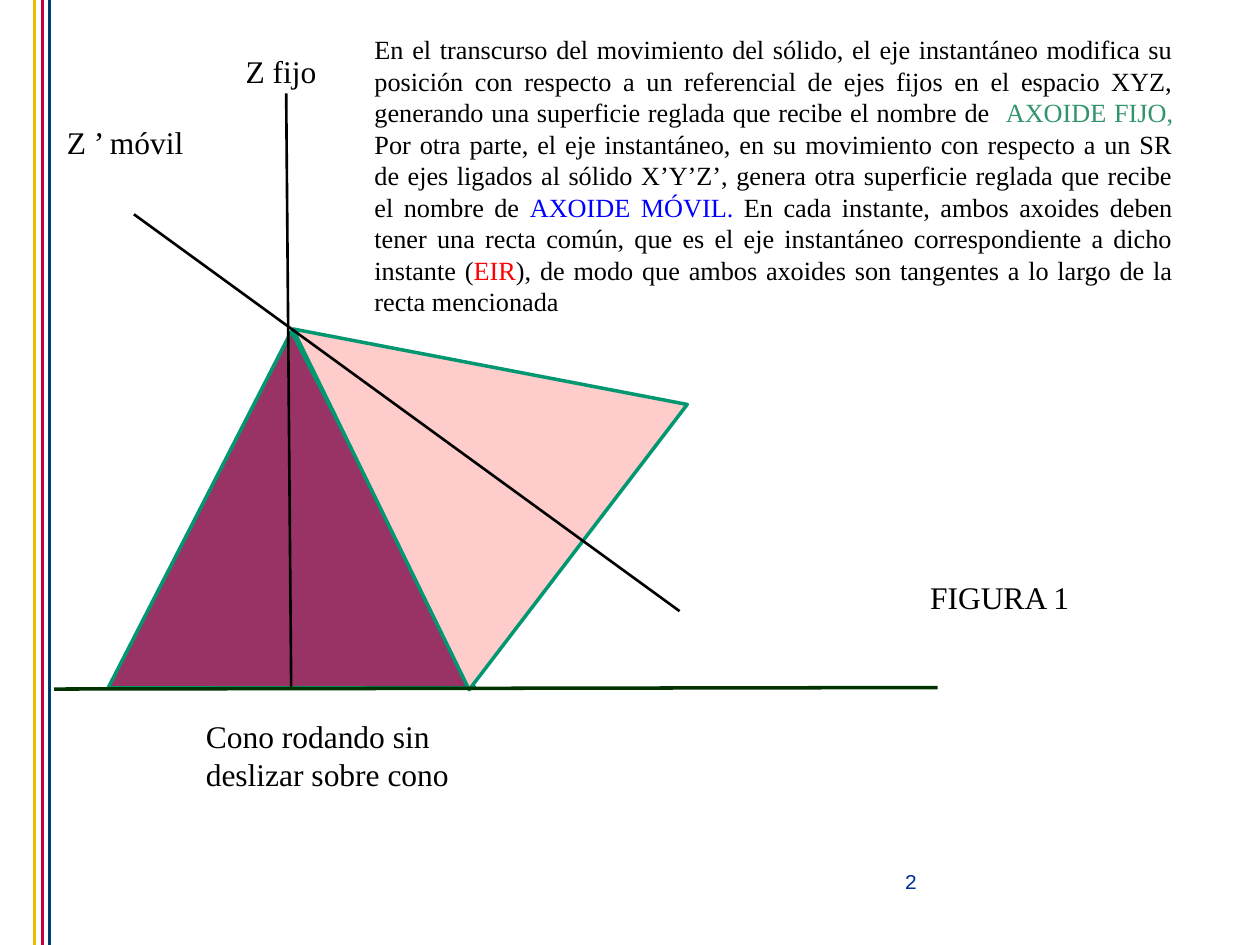
from pptx import Presentation
from pptx.dml.color import RGBColor
from pptx.enum import lang, shapes, text
from pptx.oxml.ns import qn
from pptx.util import Cm, Pt
from lxml import etree

COLORS = {
    "black": "000000", "gold": "EBBD00", "crimson": "C1003D", "navy": "003F6D",
    "number": "003399", "plum": "993366", "pink": "FFCCCC", "edge": "009771",
    "ground": "003300", "fixed": "32946A", "moving": "0000FF", "axis": "FF0000",
}
SERIF, MONO = "Times New Roman", "Courier New"
LEFT, CENTER, JUSTIFY = (text.PP_ALIGN.LEFT, text.PP_ALIGN.CENTER,
                         text.PP_ALIGN.JUSTIFY)
SPANISH = lang.MSO_LANGUAGE_ID.SPANISH
MODERN_SPANISH = lang.MSO_LANGUAGE_ID.SPANISH_SPAIN_MODERN_SORT if hasattr(
    lang.MSO_LANGUAGE_ID, "SPANISH_SPAIN_MODERN_SORT") else lang.MSO_LANGUAGE_ID.MEXICAN_SPANISH
WIDTH, HEIGHT = 25.4, 19.05

# Content: all lengths in centimetres
STRIPES = [(0.7, "gold"), (0.86, "crimson"), (1, "navy")]

# left, top, width, height, rotation, fill
CONES = [
    (2.18, 6.68, 7.39, 7.19, 0, "plum"),
    (5.16, 5.21, 7.24, 7.24, 307.4, "pink"),
]

# start x, start y, end x, end y, colour, points
AXES = [
    (5.77, 1.88, 5.87, 13.89, "black", 1.5),
    (2.7, 4.32, 13.7, 12.32, "black", 1.5),
    (1.09, 13.89, 18.9, 13.86, "ground", 2),
]

# words, colour, language
EXPLANATION = [
    ("En el transcurso del movimiento del sólido, el eje instantáneo modifica su "
     "posición con respecto a un referencial de ejes fijos en el espacio XYZ, "
     "generando una superficie reglada que recibe el nombre de  ", "black", SPANISH),
    ("AXOIDE FIJO, ", "fixed", SPANISH),
    ("Por otra parte, el eje instantáneo, en su movimiento con respecto a un SR ",
     "black", SPANISH),
    ("de ejes ligados al sólido X’Y’Z’, genera otra superficie reglada que recibe "
     "el nombre de ", "black", MODERN_SPANISH),
    ("AXOIDE MÓVIL.", "moving", SPANISH),
    (" En cada instante, ambos axoides deben tener una recta común, que es el eje "
     "instantáneo correspondiente a dicho instante (", "black", SPANISH),
    ("EIR", "axis", SPANISH),
    ("), de modo que ambos axoides son tangentes a lo largo de la recta mencionada",
     "black", SPANISH),
]

# box, runs, points, font, alignment
TEXTS = [
    ((4.7, 0.93, 2.59, 1.02), [("Z fijo", "black", SPANISH)], 18, SERIF, LEFT),
    ((1.1, 2.36, 3.61, 1.02), [("Z ’ móvil", "black", SPANISH)], 18, SERIF, LEFT),
    ((3.9, 14.33, 6.81, 1.8),
     [("Cono rodando sin deslizar sobre cono", "black", SPANISH)], 18, SERIF, LEFT),
    ((7.3, 0.55, 16.6, 6.02), EXPLANATION, 15, SERIF, JUSTIFY),
    ((18.5, 11.53, 4.8, 1.02), [("FIGURA 1", "black", SPANISH)], 18, SERIF, LEFT),
    ((17.63, 17.38, 1.47, 0.69), [("2", "number", SPANISH)], 12, MONO, CENTER),
]


def color(name):
    return RGBColor.from_string(COLORS[name])


def add_line(slide, start_x, start_y, end_x, end_y, line_color, points):
    line = slide.shapes.add_connector(
        shapes.MSO_CONNECTOR.STRAIGHT, Cm(start_x), Cm(start_y), Cm(end_x), Cm(end_y))
    line.line.color.rgb = color(line_color)
    line.line.width = Pt(points)
    etree.SubElement(line._element.spPr, qn("a:effectLst"))


def add_cone(slide, left, top, width, height, rotation, fill):
    cone = slide.shapes.add_shape(
        shapes.MSO_SHAPE.ISOSCELES_TRIANGLE, Cm(left), Cm(top), Cm(width), Cm(height))
    cone.rotation = rotation
    cone.shadow.inherit = False
    cone.fill.solid()
    cone.fill.fore_color.rgb = color(fill)
    cone.line.color.rgb = color("edge")
    cone.line.width = Pt(2)


def add_text(slide, box, runs, points, font, alignment):
    frame = slide.shapes.add_textbox(*map(Cm, box)).text_frame
    frame.word_wrap = True
    paragraph = frame.paragraphs[0]
    paragraph.alignment = alignment
    paragraph.font.size = Pt(points)
    paragraph.font.name = font
    for words, run_color, language in runs:
        run = paragraph.add_run()
        run.text = words
        run.font.color.rgb = color(run_color)
        run.font.language_id = language


def main():
    presentation = Presentation()
    presentation.slide_width, presentation.slide_height = Cm(WIDTH), Cm(HEIGHT)
    slide = presentation.slides.add_slide(presentation.slide_layouts[6])

    # Stripes down the left edge
    for x, stripe_color in STRIPES:
        add_line(slide, x, 0, x, HEIGHT, stripe_color, 1.5)

    # Cones, with the axes and the ground over them
    for cone in CONES:
        add_cone(slide, *cone)
    for axis in AXES:
        add_line(slide, *axis)

    # Labels, explanation and slide number
    for item in TEXTS:
        add_text(slide, *item)

    presentation.save("out.pptx")


if __name__ == "__main__":
    main()
